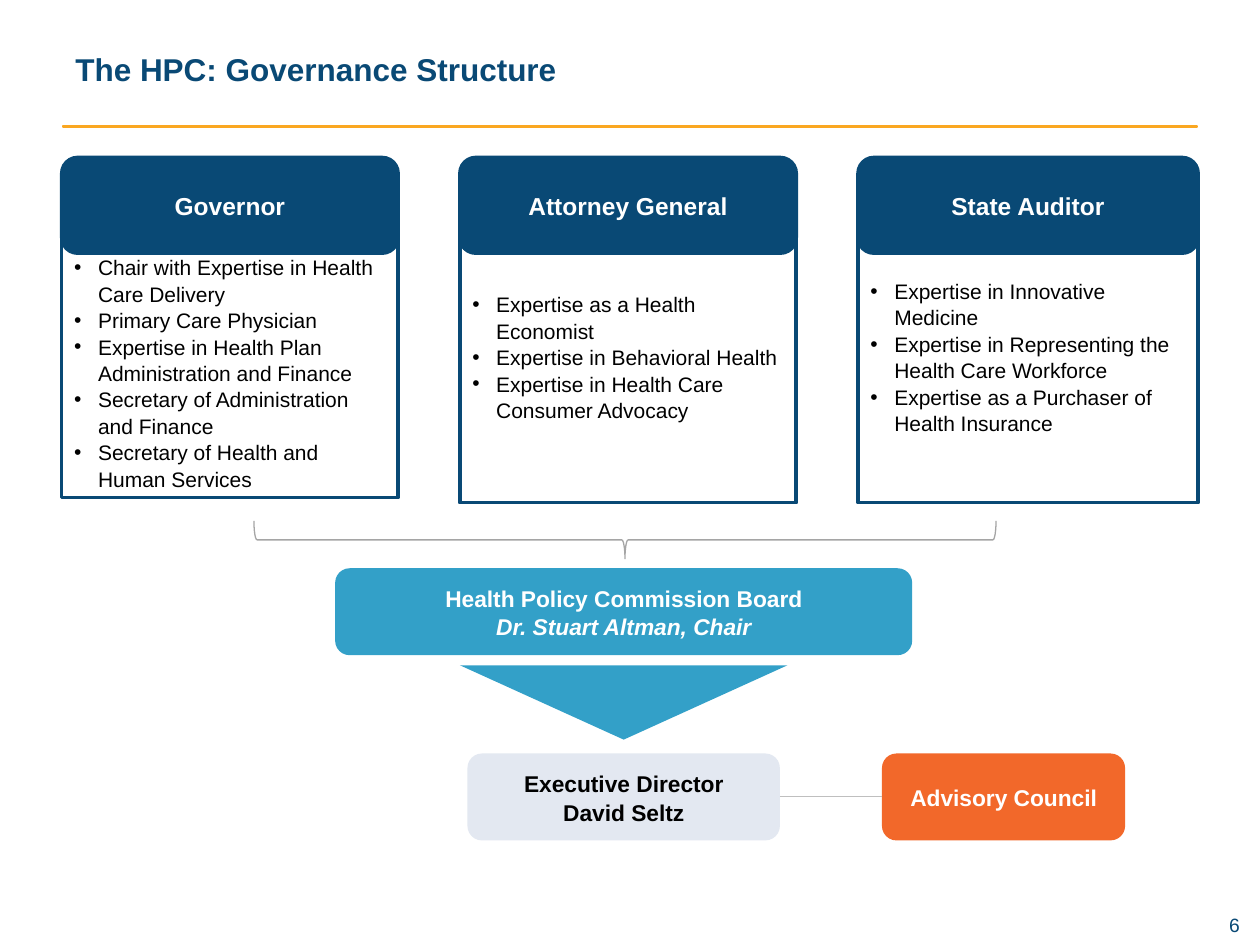
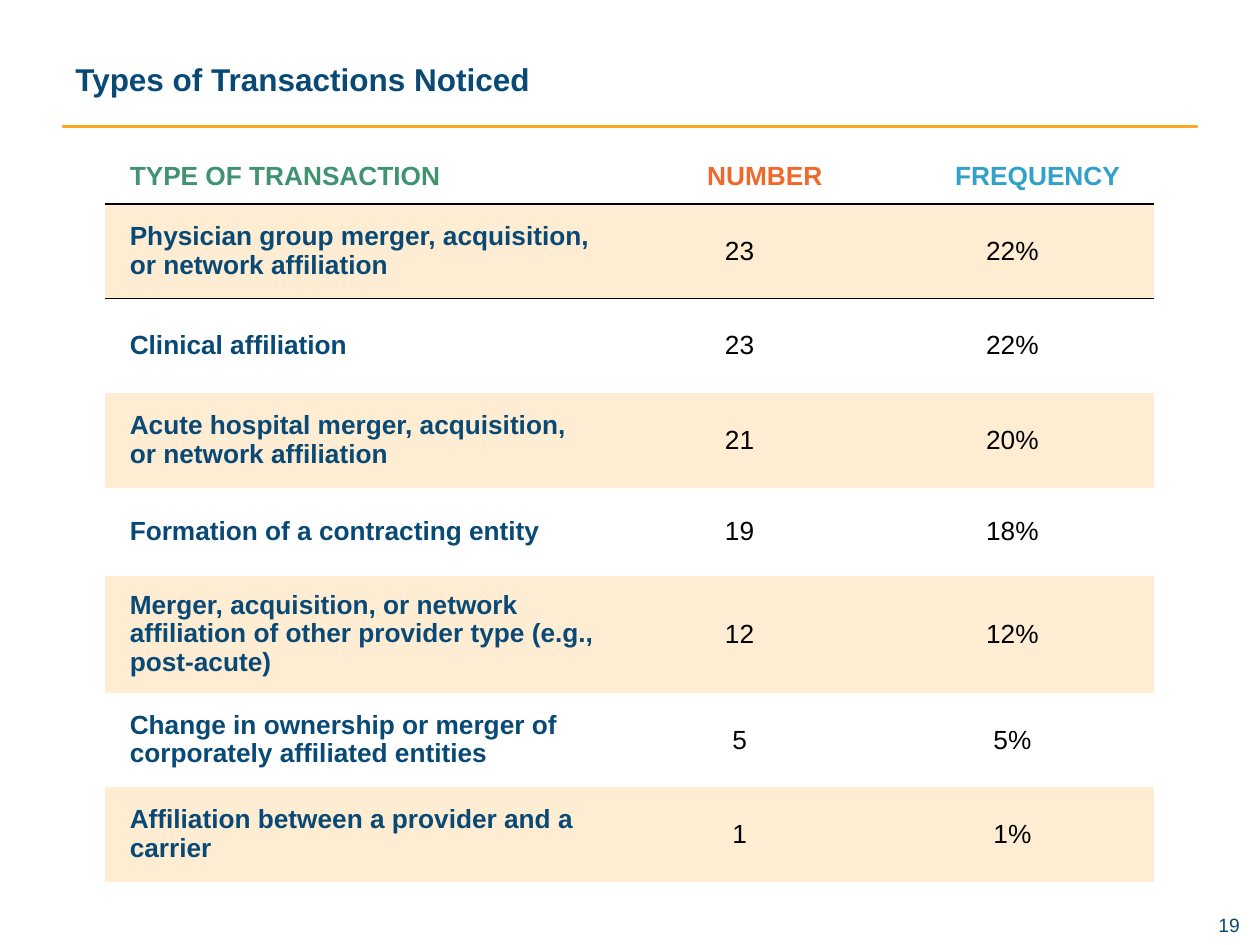
from dataclasses import dataclass

from lxml.etree import SubElement
from pptx import Presentation
from pptx.dml.color import RGBColor
from pptx.enum.shapes import MSO_CONNECTOR, MSO_SHAPE
from pptx.enum.text import MSO_ANCHOR, PP_ALIGN
from pptx.oxml import parse_xml
from pptx.oxml.ns import nsdecls, qn
from pptx.util import Inches, Pt


@dataclass(frozen=True)
class Theme:
    font: str = "Arial"
    navy: str = "094975"
    gold: str = "FAA721"
    teal: str = "33A0C8"
    orange: str = "F2682A"
    green: str = "409371"
    pale_blue: str = "E3E8F1"
    cream: str = "FEEDD3"
    white: str = "FFFFFF"
    black: str = "000000"
    brace_gray: str = "A5A5A5"
    link_gray: str = "BFBFBF"
    title_size: float = 18
    table_size: float = 15
    header_size: float = 14
    box_size: float = 13
    list_size: float = 12
    page_size: float = 11
    box_spacing: float = 1.05
    table_spacing: float = 0.97


THEME = Theme()
NO_GRID_STYLE = "{2D5ABB26-0587-4C30-8999-92F81FD0307C}"

# Appointing authority, left, width, list top, list anchor, seats
AUTHORITIES = [
    ("Governor", 0.49, 2.67, 1.63, MSO_ANCHOR.BOTTOM, [
        "Chair with Expertise in Health Care Delivery",
        "Primary Care Physician",
        "Expertise in Health Plan Administration and Finance",
        "Secretary of Administration and Finance",
        "Secretary of Health and Human Services"]),
    ("Attorney General", 3.65, 2.67, 1.67, MSO_ANCHOR.MIDDLE, [
        "Expertise as a Health Economist",
        "Expertise in Behavioral Health",
        "Expertise in Health Care Consumer Advocacy"]),
    ("State Auditor", 6.81, 2.7, 1.67, MSO_ANCHOR.MIDDLE, [
        "Expertise in Innovative Medicine",
        "Expertise in Representing the Health Care Workforce",
        "Expertise as a Purchaser of Health Insurance"]),
]

TRANSACTION_HEADINGS = [
    ("TYPE OF TRANSACTION", THEME.green),
    ("NUMBER", THEME.orange),
    ("FREQUENCY", THEME.teal),
]
TRANSACTIONS = [
    ("Physician group merger, acquisition, or network affiliation", "23", "22%"),
    ("Clinical affiliation", "23", "22%"),
    ("Acute hospital merger, acquisition, or network affiliation", "21", "20%"),
    ("Formation of a contracting entity", "19", "18%"),
    ("Merger, acquisition, or network affiliation of other provider type "
     "(e.g., post-acute)", "12", "12%"),
    ("Change in ownership or merger of corporately affiliated entities", "5", "5%"),
    ("Affiliation between a provider and a carrier", "1", "1%"),
]


def set_values(target, values):
    for name, value in values.items():
        setattr(target, name, value)


def inches(*lengths):
    return [Inches(length) for length in lengths]


# Text
def write(frame, lines, size, color, align=PP_ALIGN.LEFT, bold=False,
          anchor=MSO_ANCHOR.MIDDLE, spacing=None, bullets=False):
    """Fill a text frame; a line is a string or a (string, italic) pair."""
    set_values(frame, {"word_wrap": True, "vertical_anchor": anchor})
    for index, line in enumerate(lines):
        text, italic = line if isinstance(line, tuple) else (line, False)
        para = frame.paragraphs[0] if index == 0 else frame.add_paragraph()
        set_values(para, {"alignment": align, "line_spacing": spacing})
        if bullets:
            add_bullet(para)
        span = para.add_run()
        span.text = text
        set_values(span.font, {"name": THEME.font, "size": Pt(size),
                               "bold": bold, "italic": italic})
        span.font.color.rgb = RGBColor.from_string(color)


def indent(para, left, first=0):
    properties = para._p.get_or_add_pPr()
    properties.set("marL", str(Inches(left)))
    properties.set("indent", str(Inches(first)))
    return properties


def add_bullet(para):
    properties = indent(para, 0.19, -0.19)
    SubElement(properties, qn("a:buFont"), typeface=THEME.font)
    SubElement(properties, qn("a:buChar"), char="•")


def add_text(page, place, lines, margins, **style):
    box = page.shapes.add_textbox(*inches(*place))
    sides = ("margin_left", "margin_top", "margin_right", "margin_bottom")
    set_values(box.text_frame, dict(zip(sides, inches(*margins))))
    write(box.text_frame, lines, **style)


# Shapes and lines
def add_shape(page, kind, place, fill=None, line=None, weight=2, rotation=0):
    shape = page.shapes.add_shape(kind, *inches(*place))
    shape.shadow.inherit = False
    shape.rotation = rotation
    if fill:
        shape.fill.solid()
        shape.fill.fore_color.rgb = RGBColor.from_string(fill)
    else:
        shape.fill.background()
    if line:
        shape.line.color.rgb = RGBColor.from_string(line)
        shape.line.width = Pt(weight)
    else:
        shape.line.fill.background()
    return shape


def add_rounded_box(page, place, lines, fill, color=THEME.white,
                    size=THEME.box_size, line=None):
    shape = add_shape(page, MSO_SHAPE.ROUNDED_RECTANGLE, place, fill, line)
    write(shape.text_frame, lines, size, color, PP_ALIGN.CENTER, bold=True,
          spacing=THEME.box_spacing)


def add_link(page, start, end):
    link = page.shapes.add_connector(MSO_CONNECTOR.STRAIGHT, *inches(*start, *end))
    link.line.color.rgb = RGBColor.from_string(THEME.link_gray)
    link.line.width = Pt(0.75)
    SubElement(link.element.spPr, qn("a:effectLst"))


def add_authority(page, name, left, width, top, anchor, seats):
    seat_box = add_shape(page, MSO_SHAPE.RECTANGLE, (left, top, width, 2.32),
                         THEME.white, THEME.navy)
    write(seat_box.text_frame, seats, THEME.list_size, THEME.black,
          anchor=anchor, spacing=THEME.box_spacing, bullets=True)
    add_rounded_box(page, (left, 1.25, width, 0.76), [name], THEME.navy,
                    size=THEME.header_size, line=THEME.navy)


# Table
def format_cell(cell, text, color, bold, align, margins, left_indent, anchor, fill):
    sides = ("margin_left", "margin_top", "margin_right", "margin_bottom")
    set_values(cell, dict(zip(sides, inches(*margins))))
    write(cell.text_frame, [text], THEME.table_size, color, align, bold,
          spacing=THEME.table_spacing)
    cell.vertical_anchor = anchor
    if left_indent:
        indent(cell.text_frame.paragraphs[0], left_indent)
    if fill:
        cell.fill.solid()
        cell.fill.fore_color.rgb = RGBColor.from_string(fill)
    else:
        cell.fill.background()


def add_rule(cell, side):
    border = parse_xml(
        f'<a:{side} {nsdecls("a")} w="{Pt(1)}"><a:solidFill>'
        f'<a:srgbClr val="{THEME.black}"/></a:solidFill></a:{side}>')
    cell._tc.get_or_add_tcPr().insert(0, border)


def add_transaction_table(page):
    widths = (4, 2.08, 2.25)
    heights = (0.48, 0.75, 0.75, 0.75, 0.7, 0.75, 0.75, 0.75)
    holder = page.shapes.add_table(len(heights), len(widths), *inches(
        0.83, 1.14, sum(widths), sum(heights)))
    table = holder.table
    set_values(table, {"first_row": False, "horz_banding": False})
    for style in holder.element.iter(qn("a:tableStyleId")):
        style.text = NO_GRID_STYLE
    for column, width in zip(table.columns, widths):
        column.width = Inches(width)
    for row, height in zip(table.rows, heights):
        row.height = Inches(height)

    wide, narrow = (0.1,) * 4, (0.01, 0.01, 0.01, 0)
    for column, (heading, color) in enumerate(TRANSACTION_HEADINGS):
        cell = table.cell(0, column)
        align = PP_ALIGN.CENTER if column else PP_ALIGN.LEFT
        format_cell(cell, heading, color, True, align, wide,
                    0.4 if column else 0.1, MSO_ANCHOR.BOTTOM, None)
        add_rule(cell, "lnB")
        add_rule(table.cell(1, column), "lnT")

    for row, values in enumerate(TRANSACTIONS, start=1):
        fill = THEME.cream if row % 2 else THEME.white
        for column, value in enumerate(values):
            if column == 0:
                look = (THEME.navy, True, PP_ALIGN.LEFT, wide, 0.1)
            else:
                look = (THEME.black, False, PP_ALIGN.CENTER, narrow, 0)
            format_cell(table.cell(row, column), value, *look,
                        MSO_ANCHOR.MIDDLE, fill)


# Slides
def add_page(deck, title, title_place, number):
    """Start a slide with the shared title, gold rule and page number."""
    page = deck.slides.add_slide(deck.slide_layouts[6])
    add_shape(page, MSO_SHAPE.RECTANGLE, (0.5, 1, 9, 0.01),
              THEME.gold, THEME.gold, weight=1)
    add_text(page, (7.42, 7.25, 2.42, 0.19), [number], (0, 0, 0, 0),
             size=THEME.page_size, color=THEME.navy, align=PP_ALIGN.RIGHT,
             anchor=MSO_ANCHOR.TOP)
    add_text(page, title_place, [title], (0.1, 0.05, 0.1, 0.05),
             size=THEME.title_size, color=THEME.navy, bold=True)
    return page


def add_governance_page(deck):
    page = add_page(deck, "The HPC: Governance Structure", (0.5, 0.17, 9, 0.75), "6")
    for authority in AUTHORITIES:
        add_authority(page, *authority)
    add_shape(page, MSO_SHAPE.RIGHT_BRACE, (4.81, 1.34, 0.3, 5.89),
              line=THEME.brace_gray, weight=0.75, rotation=90)
    add_rounded_box(page, (2.66, 4.51, 4.58, 0.69),
                    ["Health Policy Commission Board",
                     ("Dr. Stuart Altman, Chair", True)], THEME.teal)
    add_shape(page, MSO_SHAPE.ISOSCELES_TRIANGLE, (3.65, 5.28, 2.6, 0.59),
              THEME.teal, rotation=180)
    add_rounded_box(page, (3.71, 5.98, 2.48, 0.69),
                    ["Executive Director", "David Seltz"],
                    THEME.pale_blue, THEME.black)
    add_rounded_box(page, (7, 5.98, 1.93, 0.69), ["Advisory Council"], THEME.orange)
    add_link(page, (6.19, 6.32), (7, 6.32))


def add_transactions_page(deck):
    page = add_page(deck, "Types of Transactions Noticed",
                    (0.5, 0.25, 5.42, 0.75), "19")
    add_transaction_table(page)


def main():
    deck = Presentation()
    set_values(deck, {"slide_width": Inches(10), "slide_height": Inches(7.5)})
    add_governance_page(deck)
    add_transactions_page(deck)
    deck.save("out.pptx")


if __name__ == "__main__":
    main()
